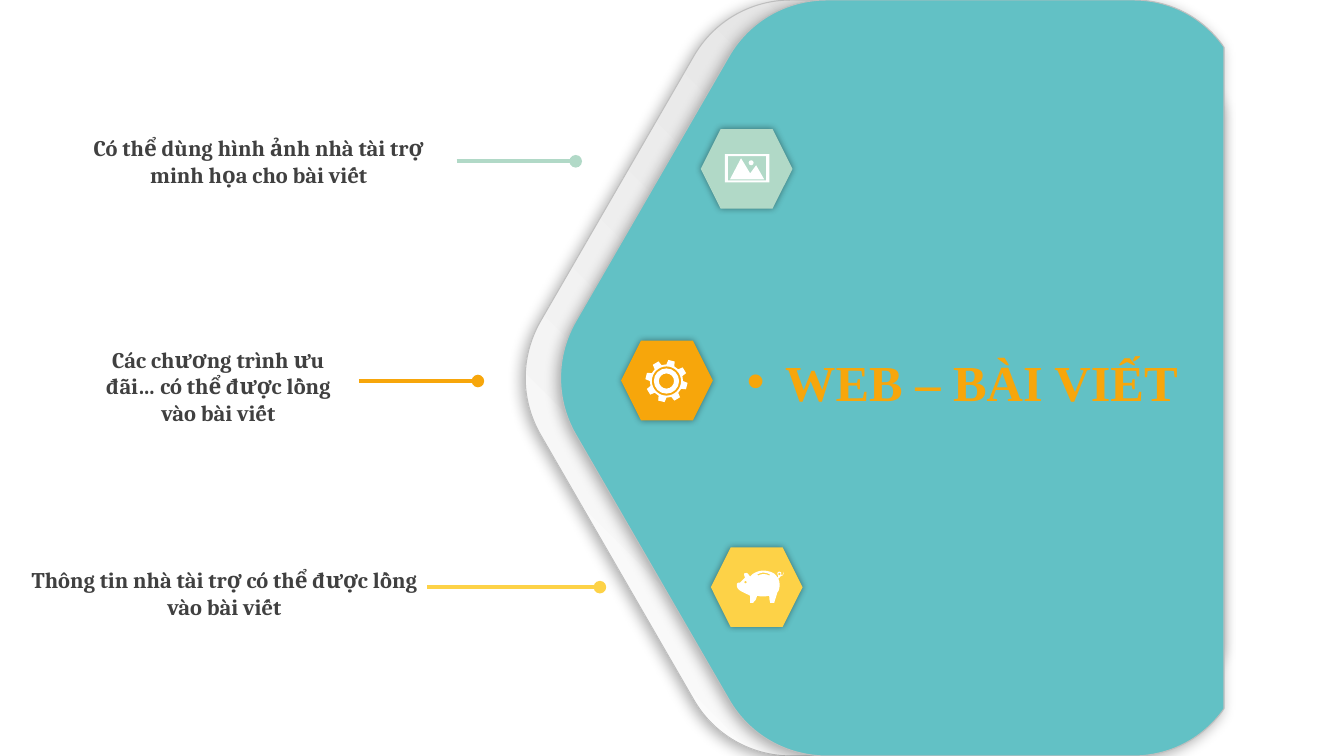
"""Build the sponsor article slide: three callouts beside a pointed title panel."""
from dataclasses import dataclass
from math import cos, pi, sin

from lxml import etree
from pptx import Presentation
from pptx.dml.color import RGBColor
from pptx.enum.shapes import MSO_CONNECTOR, MSO_SHAPE
from pptx.enum.text import MSO_ANCHOR, MSO_AUTO_SIZE, PP_ALIGN
from pptx.oxml.ns import qn
from pptx.util import Pt

PX = 9144
CENTER = PP_ALIGN.CENTER
TOP, MIDDLE = MSO_ANCHOR.TOP, MSO_ANCHOR.MIDDLE
NO_AUTOFIT = MSO_AUTO_SIZE.NONE
STRAIGHT = MSO_CONNECTOR.STRAIGHT
HEXAGON = MSO_SHAPE.HEXAGON
TITLE_ONLY = 5
RIGHT_SIDE = 3
SLIDE_W, SLIDE_H = 1333, 750
RIGHT_EDGE = 1214
HEX_W, HEX_H = 91, 79
WHITE, ORANGE, YELLOW, MINT = "FFFFFF", "F7A60B", "FDD247", "B1D9C7"
TEAL, SILVER, DARK, EDGE = "62C1C5", "D9D9D9", "404040", "BFBFBF"

Contour = list[tuple[float, ...]]


@dataclass
class Panel:
    shift: int
    shoulder: int
    bend: tuple[int, ...]
    corner_y: int
    colours: tuple[str, ...]


@dataclass
class Callout:
    text: str
    box: tuple[int, int, int, int]
    rule: tuple[int, int, int]
    colour: str
    hexagon: tuple[int, int]
    joined: bool = False


PANELS = [
    Panel(0, 1089, (1129, 0, 1166, 21, 1185, 56), 106, (SILVER, WHITE)),
    Panel(35, 1124, (1159, 0, 1191, 16, 1212, 44), 47, (TEAL,)),
]
CALLOUTS = [
    Callout("Các chương trình ưu đãi… có thể được lồng vào bài viết",
            (77, 338, 279, 65), (356, 474, 378), ORANGE, (616, 338)),
    Callout("Có thể dùng hình ảnh nhà tài trợ minh họa cho bài viết",
            (77, 128, 359, 57), (453, 571, 160), MINT, (695, 128)),
    Callout("Thông tin nhà tài trợ có thể được lồng vào bài viết",
            (21, 557, 403, 51), (424, 595, 583), YELLOW, (705, 543), True),
]
PIG: list[Contour] = [
    [(757, 568), (755, 568, 753, 569, 751, 570), (752, 571),
     (755, 569, 760, 569, 763, 571), (764, 570), (762, 569, 760, 568, 757, 568)],
    [(757, 566), (762, 566, 768, 568, 770, 571), (771, 573),
     (772, 572, 772, 572, 772, 572), (771, 571, 771, 571, 771, 569),
     (771, 568, 772, 567, 773, 567), (775, 567, 775, 568, 775, 570),
     (775, 570, 775, 570, 775, 571), (776, 570, 777, 571, 777, 567),
     (778, 570, 776, 572, 774, 572), (773, 573, 773, 574, 772, 574),
     (773, 577), (774, 581, 773, 586, 771, 588),
     (770, 592, 769, 594, 768, 598), (768, 598, 764, 598, 764, 598),
     (763, 595, 763, 593, 763, 591), (759, 592, 754, 592, 751, 591),
     (751, 594, 749, 596, 747, 598), (744, 598), (744, 598, 744, 593, 744, 591),
     (739, 588, 729, 586, 731, 579), (731, 578, 733, 578, 734, 578),
     (736, 576, 737, 575, 739, 573), (738, 572, 738, 569, 738, 569),
     (742, 567, 742, 570, 744, 572), (747, 568, 753, 566, 757, 566)],
]


def rgb(colour: str) -> RGBColor:
    """Turn a hex string into a colour."""
    return RGBColor.from_string(colour)


def px(*lengths: float) -> list[int]:
    """Turn px lengths into EMU."""
    return [round(length * PX) for length in lengths]


def circle(x: float, y: float, r: float) -> Contour:
    """Return a circle as a contour of four curves."""
    k = 0.55 * r
    return [(x, y - r), (x + k, y - r, x + r, y - k, x + r, y),
            (x + r, y + k, x + k, y + r, x, y + r),
            (x - k, y + r, x - r, y + k, x - r, y),
            (x - r, y - k, x - k, y - r, x, y - r)]


def frame(left: int, top: int, right: int, bottom: int) -> Contour:
    """Return a rectangle as a contour."""
    return [(left, top), (right, top), (right, bottom), (left, bottom)]


def gear(x: int, y: int) -> list[Contour]:
    """Return an eight-toothed gear with three inner rings."""
    teeth = []
    for tooth in range(8):
        for offset, radius in ((-14, 16.5), (-9, 21), (9, 21), (14, 16.5)):
            angle = (tooth * 45 + 14 + offset) * pi / 180
            teeth.append((x + radius * sin(angle), y - radius * cos(angle)))
    return [teeth] + [circle(x, y, radius) for radius in (14.5, 12.5, 7.5)]


def landscape() -> list[Contour]:
    """Return a framed view with a sun and two hills."""
    hills = [(735, 157), (744, 172), (750, 164), (758, 178), (724, 178)]
    return [circle(745, 161.5, 2.5), hills, frame(722, 155, 760, 179), frame(719, 153, 763, 181)]


def panel_outline(panel: Panel) -> Contour:
    """Return a panel pointing left, symmetric about the slide's middle."""
    dx = panel.shift
    x1, y1, x2, y2, x3, y3 = panel.bend
    return [(785 + dx, 0), (745 + dx, 0, 708 + dx, 21, 688 + dx, 56), (536 + dx, 319),
            (526 + dx, 336.5, 521 + dx, 355.75, 521 + dx, 375),
            (521 + dx, 394.25, 526 + dx, 413.5, 536 + dx, 431), (688 + dx, 694),
            (708 + dx, 729, 745 + dx, SLIDE_H, 785 + dx, SLIDE_H),
            (panel.shoulder, SLIDE_H),
            (x1, SLIDE_H - y1, x2, SLIDE_H - y2, x3, SLIDE_H - y3),
            (RIGHT_EDGE, SLIDE_H - panel.corner_y), (RIGHT_EDGE, panel.corner_y),
            (x3, y3), (x2, y2, x1, y1, panel.shoulder, 0)]


def paint(shape, *colours: str, edge: str = "") -> None:
    """Fill a shape with one colour or a gradient, and draw its edge if any."""
    shape.shadow.inherit = False
    if len(colours) > 1:
        shape.fill.gradient()
        shape.fill.gradient_angle = 225
        for stop, colour in zip(shape.fill.gradient_stops, colours):
            stop.color.rgb = rgb(colour)
    else:
        shape.fill.solid()
        shape.fill.fore_color.rgb = rgb(colours[0])
    if edge:
        shape.line.color.rgb = rgb(edge)
        shape.line.width = Pt(0.75)
    else:
        shape.line.fill.background()


def cast_shadow(shape, opacity: int, blur: int, distance: int, angle: int) -> None:
    """Give a painted shape a black outer shadow."""
    effects = shape.element.spPr.find(qn("a:effectLst"))
    shadow = etree.SubElement(effects, qn("a:outerShdw"), blurRad=str(Pt(blur)),
                              dist=str(Pt(distance)), dir=str(angle * 60000),
                              algn="ctr", rotWithShape="0")
    black = etree.SubElement(shadow, qn("a:srgbClr"), val="000000")
    etree.SubElement(black, qn("a:alpha"), val=str(opacity * 1000))


def add_outline(shapes, contours: list[Contour]):
    """Add one freeform of closed contours, bending its six-number segments."""
    builder = shapes.build_freeform(*px(*contours[0][0]), scale=1.0)
    for index, contour in enumerate(contours):
        if index:
            builder.move_to(*px(*contour[0]))
        builder.add_line_segments([px(*segment[-2:]) for segment in contour[1:]], close=True)
    outline = builder.convert_to_shape()
    segments = [segment for contour in contours for segment in contour[1:]]
    for side, segment in zip(list(outline.element.iter(qn("a:lnTo"))), segments):
        if len(segment) == 6:
            curve = etree.Element(qn("a:cubicBezTo"))
            ends = px(*segment)
            for x, y in zip(ends[::2], ends[1::2]):
                etree.SubElement(curve, qn("a:pt"), x=str(x - outline.left),
                                 y=str(y - outline.top))
            side.getparent().replace(side, curve)
    return outline


def write(holder, text: str, *, font: str, size: int, colour: str,
          anchor=TOP, bullet: str = "") -> None:
    """Write one bold centred paragraph, with a bullet if given."""
    body = holder.text_frame
    body.word_wrap = True
    body.auto_size = NO_AUTOFIT
    body.vertical_anchor = anchor
    paragraph = body.paragraphs[0]
    paragraph.text = text
    paragraph.alignment = CENTER
    if bullet:
        properties = paragraph._p.get_or_add_pPr()
        properties.set("marL", str(38 * PX))
        properties.set("indent", str(-38 * PX))
        etree.SubElement(properties, qn("a:buFont"), typeface="Arial")
        etree.SubElement(properties, qn("a:buChar"), char=bullet)
    face = paragraph.runs[0].font
    face.name, face.size, face.bold = font, Pt(size), True
    face.color.rgb = rgb(colour)


def add_callout(shapes, callout: Callout) -> None:
    """Add a grouped caption and its dotted rule."""
    group = shapes.add_group_shape().shapes
    start, end, y = callout.rule
    rule = group.add_connector(STRAIGHT, *px(start, y, end, y))
    caption = group.add_textbox(*px(*callout.box))
    write(caption, callout.text, font="Cambria", size=16, colour=DARK)
    if callout.joined:
        rule.begin_connect(caption, RIGHT_SIDE)
        rule.end_y = rule.begin_y
    rule.line.color.rgb = rgb(callout.colour)
    rule.line.width = Pt(3)
    properties = rule.element.spPr
    etree.SubElement(properties.find(qn("a:ln")), qn("a:tailEnd"), type="oval")
    etree.SubElement(properties, qn("a:effectLst"))


def main() -> None:
    """Build and save the slide."""
    deck = Presentation()
    deck.slide_width, deck.slide_height = px(SLIDE_W, SLIDE_H)
    slide = deck.slides.add_slide(deck.slide_layouts[TITLE_ONLY])
    shapes = slide.shapes
    for panel in PANELS:
        backdrop = add_outline(shapes, [panel_outline(panel)])
        paint(backdrop, *panel.colours, edge=EDGE)
        cast_shadow(backdrop, 33, 10, 3, 135)
    for callout in CALLOUTS:
        add_callout(shapes, callout)
    for callout in CALLOUTS:
        badge = shapes.add_shape(HEXAGON, *px(*callout.hexagon, HEX_W, HEX_H))
        paint(badge, callout.colour)
        cast_shadow(badge, 40, 5, 0, 0)
    pig = PIG + [circle(739.5, 577.5, 1.5), circle(773, 569.5, 1.5)]
    for icon in (landscape(), pig, gear(661, 378)):
        paint(add_outline(shapes, icon), WHITE)
    title = shapes.title
    title.left, title.top, title.width, title.height = px(712, 282, 485, 192)
    write(title, "WEB – BÀI VIẾT", font="Times New Roman", size=36, colour=ORANGE,
          anchor=MIDDLE, bullet="•")
    title.element.getparent().append(title.element)
    deck.save("out.pptx")


if __name__ == "__main__":
    main()
